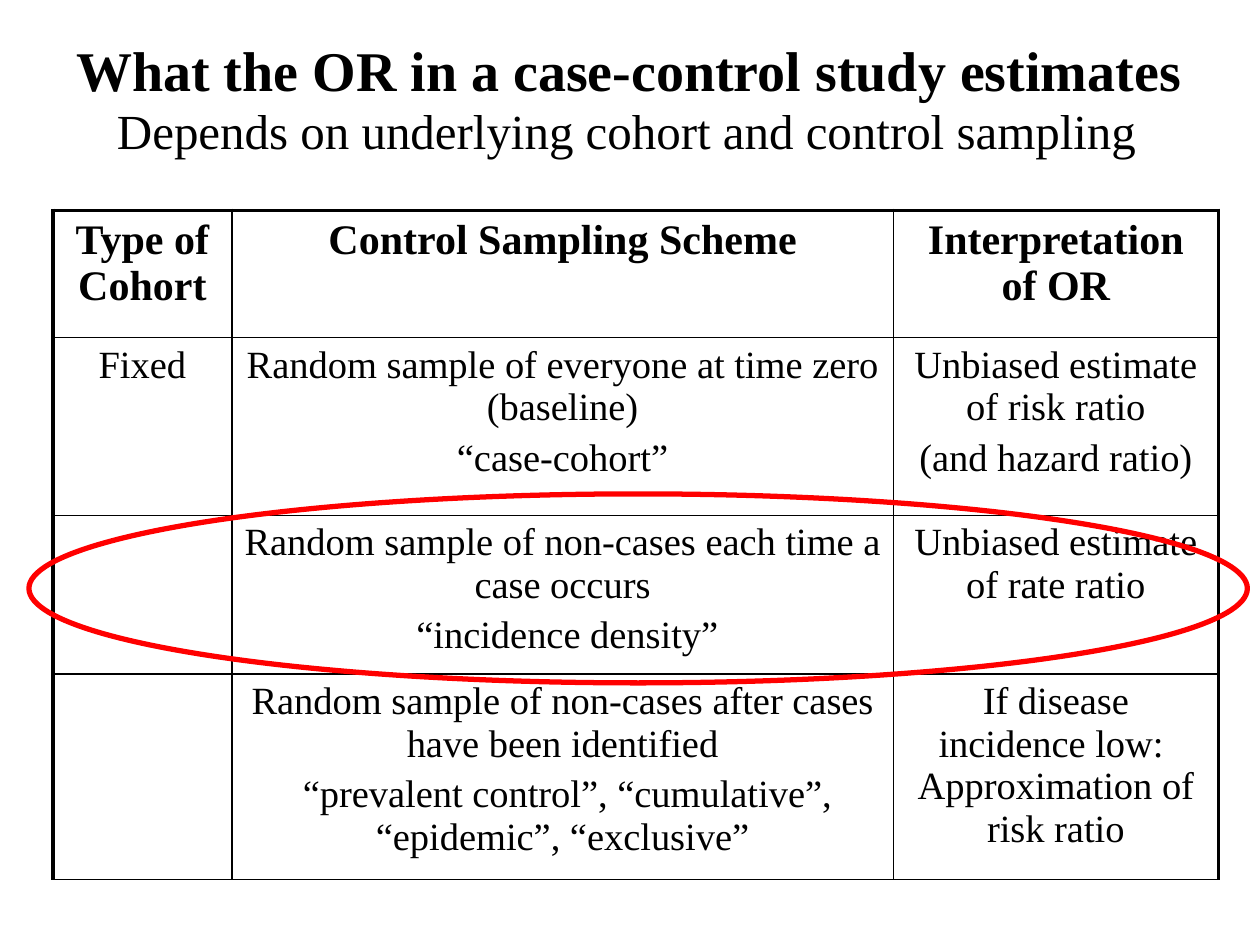
from dataclasses import dataclass

from lxml import etree
from pptx import Presentation
from pptx.dml.color import RGBColor
from pptx.enum import shapes, text
from pptx.oxml import ns
from pptx.util import Inches, Length, Pt

BLACK = RGBColor(0x00, 0x00, 0x00)
RED = RGBColor(0xFF, 0x00, 0x00)
FONT = "Times New Roman"
THIN, THICK = Pt(1), Pt(2.25)

COLUMN_WIDTHS = [1.42, 5.25, 2.58]
ROW_HEIGHTS = [1.01, 1.41, 1.17, 1.51]
# Each cell is a list of paragraphs
ROWS = [
    [["Type of Cohort"], ["Control Sampling Scheme"], ["Interpretation of OR"]],
    [["Fixed"],
     ["Random sample of everyone at time zero (baseline)", "“case-cohort”"],
     ["Unbiased estimate of risk ratio", "(and hazard ratio)"]],
    [[],
     ["Random sample of non-cases each time a case occurs", " “incidence density”"],
     ["Unbiased estimate of rate ratio"]],
    [[],
     ["Random sample of non-cases after cases have been identified",
      " “prevalent control”, “cumulative”, “epidemic”, “exclusive”"],
     ["If disease incidence low:  Approximation of risk ratio"]],
]


@dataclass
class Heading:
    wording: str
    left: float
    top: float
    width: float
    height: float
    size: int
    bold: bool
    align: text.PP_ALIGN
    anchor: text.MSO_ANCHOR


HEADINGS = [
    Heading("What the OR in a case-control study estimates", 0.33, -0.08, 9.33, 1.25,
            32, True, text.PP_ALIGN.CENTER, text.MSO_ANCHOR.MIDDLE),
    Heading("Depends on underlying cohort and control sampling", 0.83, 0.75, 8.58, 0.58,
            28, False, text.PP_ALIGN.LEFT, text.MSO_ANCHOR.TOP),
]


def style_paragraph(paragraph, size: int, bold: bool, align: text.PP_ALIGN) -> None:
    paragraph.alignment = align
    paragraph.space_before = Pt(size * 0.2)
    font = paragraph.font
    font.name, font.size, font.bold = FONT, Pt(size), bold
    font.color.rgb = BLACK


def add_heading(slide, heading: Heading) -> None:
    box = slide.shapes.add_textbox(Inches(heading.left), Inches(heading.top),
                                   Inches(heading.width), Inches(heading.height))
    frame = box.text_frame
    frame.word_wrap = True
    frame.vertical_anchor = heading.anchor
    frame.text = heading.wording
    style_paragraph(frame.paragraphs[0], heading.size, heading.bold, heading.align)


def set_borders(cell, widths: dict[str, Length]) -> None:
    properties = cell._tc.get_or_add_tcPr()
    for position, (side, width) in enumerate(widths.items()):
        line = etree.Element(ns.qn(f"a:{side}"), w=str(int(width)))
        fill = etree.SubElement(line, ns.qn("a:solidFill"))
        etree.SubElement(fill, ns.qn("a:srgbClr"), val=str(BLACK))
        properties.insert(position, line)


def fill_cell(cell, paragraphs: list[str], is_header: bool) -> None:
    cell.fill.background()
    cell.text = "\n".join(paragraphs)
    for paragraph in cell.text_frame.paragraphs:
        style_paragraph(paragraph, 24 if is_header else 22, is_header,
                        text.PP_ALIGN.CENTER)


def add_sampling_table(slide) -> None:
    table = slide.shapes.add_table(
        len(ROWS), len(COLUMN_WIDTHS), Inches(0.42), Inches(1.67),
        Inches(sum(COLUMN_WIDTHS)), Inches(sum(ROW_HEIGHTS))).table
    table.first_row = table.horz_banding = False
    for column, width in zip(table.columns, COLUMN_WIDTHS):
        column.width = Inches(width)
    for row, height in zip(table.rows, ROW_HEIGHTS):
        row.height = Inches(height)

    last_column = len(COLUMN_WIDTHS) - 1
    for r, row in enumerate(ROWS):
        for c, paragraphs in enumerate(row):
            cell = table.cell(r, c)
            fill_cell(cell, paragraphs, is_header=r == 0)
            set_borders(cell, {
                "lnL": THICK if c == 0 else THIN,
                "lnR": THICK if c == last_column else THIN,
                "lnT": THICK if r == 0 else THIN,
                "lnB": THIN,
            })


def add_highlight(slide) -> None:
    ellipse = slide.shapes.add_shape(shapes.MSO_SHAPE.OVAL, Inches(0.23), Inches(3.92),
                                     Inches(9.67), Inches(1.5))
    ellipse.shadow.inherit = False
    ellipse.fill.background()
    ellipse.line.color.rgb = RED
    ellipse.line.width = Pt(3)


def main() -> None:
    deck = Presentation()
    deck.slide_width, deck.slide_height = Inches(10), Inches(7.5)
    slide = deck.slides.add_slide(deck.slide_layouts[6])

    # Title and subtitle
    for heading in HEADINGS:
        add_heading(slide, heading)

    # Sampling schemes, with incidence density circled
    add_sampling_table(slide)
    add_highlight(slide)

    deck.save("out.pptx")


if __name__ == "__main__":
    main()
